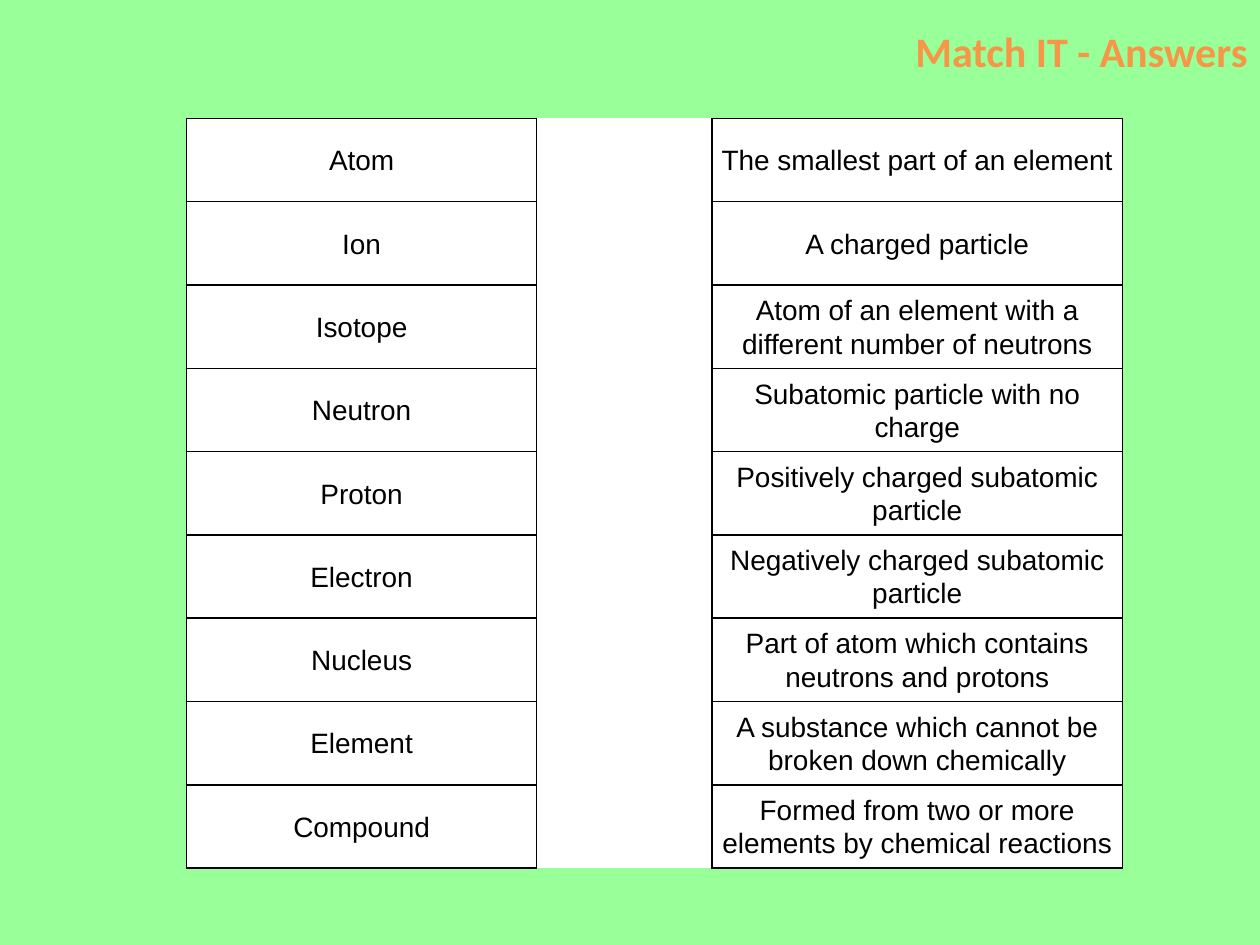
from pptx import Presentation
from pptx.dml.color import RGBColor as RGB
from pptx.enum.text import MSO_ANCHOR as Anchor, PP_ALIGN as Align
from pptx.oxml.ns import qn
from pptx.util import Inches, Pt
from lxml.etree import SubElement as Sub

# Content
TITLE = "Match IT - Answers"
PAIRS = [
    ("Atom", "The smallest part of an element"),
    ("Ion", "A charged particle"),
    ("Isotope", "Atom of an element with a different number of neutrons"),
    ("Neutron", "Subatomic particle with no charge"),
    ("Proton", "Positively charged subatomic particle"),
    ("Electron", "Negatively charged subatomic particle"),
    ("Nucleus", "Part of atom which contains neutrons and protons"),
    ("Element", "A substance which cannot be broken down chemically"),
    ("Compound", "Formed from two or more elements by chemical reactions"),
]

# Format
COLORS = {"back": "99FF99", "title": "F79646", "cell": "FFFFFF", "ink": "000000"}
HEAD = {"name": "Calibri", "size": Pt(24), "bold": True}
BODY = {"name": "Arial", "size": Pt(16), "bold": False}
INSET = {"margin_left": Inches(0.07), "margin_right": Inches(0.07),
         "margin_top": 0, "margin_bottom": 0, "vertical_anchor": Anchor.MIDDLE}
COLS = (2.78, 1.39, 3.26)
LEFT, TOP, HIGH = 1.48, 0.94, 5.95


def color(key):
    return RGB.from_string(COLORS[key])


def style(obj, values):
    for name, value in values.items():
        setattr(obj, name, value)


def write(para, text, font, key, align):
    para.text = text
    para.alignment = align
    style(para.font, font)
    para.font.color.rgb = color(key)


def border(cell, sides):
    props = cell._tc.get_or_add_tcPr()
    for side in "LRTB":
        line = Sub(props, qn("a:ln" + side), w=str(Pt(1)))
        if side in sides:
            fill = Sub(line, qn("a:solidFill"))
            Sub(fill, qn("a:srgbClr"), val=COLORS["ink"])
        else:
            Sub(line, qn("a:noFill"))


# Slide
prs = Presentation()
prs.slide_width, prs.slide_height = Inches(10), Inches(7.5)
slide = prs.slides.add_slide(prs.slide_layouts[6])
slide.background.fill.solid()
slide.background.fill.fore_color.rgb = color("back")

# Title
box = slide.shapes.add_textbox(Inches(1.77), Inches(0.04), Inches(8.23), Inches(0.72))
frame = box.text_frame
frame.word_wrap = True
frame.vertical_anchor = Anchor.MIDDLE
write(frame.paragraphs[0], TITLE, HEAD, "title", Align.RIGHT)

# Table: term, merged gap, meaning
table = slide.shapes.add_table(len(PAIRS), len(COLS), Inches(LEFT), Inches(TOP),
                               Inches(sum(COLS)), Inches(HIGH)).table
table.first_row = table.horz_banding = False
for col, wide in zip(table.columns, COLS):
    col.width = Inches(wide)
for row, (term, text) in zip(table.rows, PAIRS):
    row.height = Inches(HIGH / len(PAIRS))
    for cell, words in zip(row.cells, (term, "", text)):
        style(cell, INSET)
        border(cell, "LRTB" if words else "LR")
        cell.fill.solid()
        cell.fill.fore_color.rgb = color("cell")
        if words:
            para = cell.text_frame.paragraphs[0]
            write(para, words, BODY, "ink", Align.CENTER)
            para.line_spacing = 1.07
table.cell(0, 1).merge(table.cell(len(PAIRS) - 1, 1))

prs.save("out.pptx")
